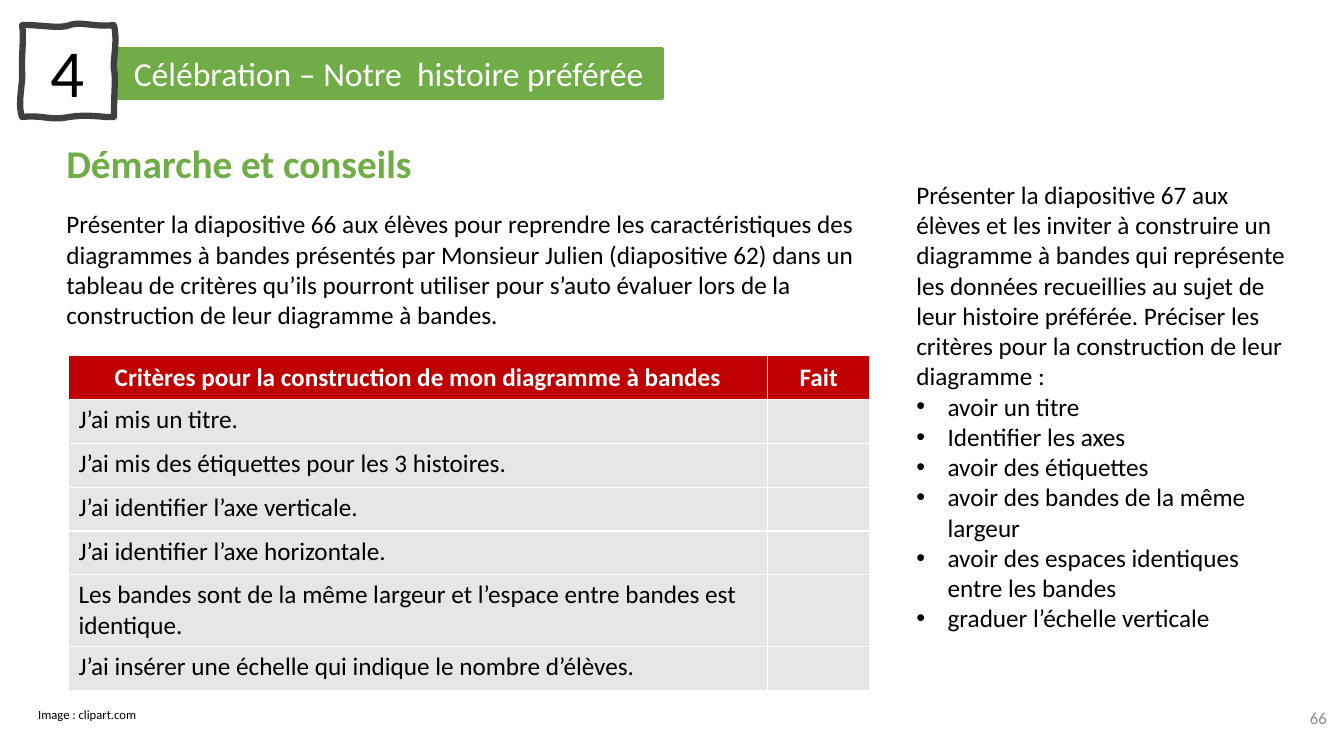
"""Build the teaching slide on criteria for a bar chart."""
from lxml import etree
from pptx import Presentation
from pptx.dml.color import RGBColor
from pptx.enum.shapes import MSO_SHAPE
from pptx.enum.text import MSO_ANCHOR, PP_ALIGN
from pptx.oxml.ns import qn
from pptx.util import Inches, Pt

LEFT, CENTER, RIGHT = PP_ALIGN.LEFT, PP_ALIGN.CENTER, PP_ALIGN.RIGHT
TOP, MIDDLE = MSO_ANCHOR.TOP, MSO_ANCHOR.MIDDLE
RECTANGLE = MSO_SHAPE.RECTANGLE
GREEN = RGBColor(0x70, 0xAD, 0x47)
RED = RGBColor(0xC0, 0x00, 0x00)
PALE = RGBColor(0xE7, 0xE6, 0xE6)
CHARCOAL = RGBColor(0x40, 0x40, 0x40)
GREY = RGBColor(0x8C, 0x8C, 0x8C)
BLACK = RGBColor(0x00, 0x00, 0x00)
WHITE = RGBColor(0xFF, 0xFF, 0xFF)
GRID = Inches(0.1)
INDENT = Inches(0.31)


def grid(*steps):
    """Turn grid steps into slide lengths."""
    return [round(step * GRID) for step in steps]


def write(frame, lines, size=18, color=BLACK, bold=False, align=LEFT,
          bullets_from=None):
    """Fill a text frame, one paragraph per line."""
    for index, line in enumerate(lines):
        paragraph = frame.paragraphs[0] if index == 0 else frame.add_paragraph()
        paragraph.alignment = align
        if bullets_from is not None and index >= bullets_from:
            properties = paragraph._p.get_or_add_pPr()
            properties.set("marL", str(INDENT))
            properties.set("indent", str(-INDENT))
            etree.SubElement(properties, qn("a:buFont"), typeface="Arial")
            etree.SubElement(properties, qn("a:buChar"), char="•")
        run = paragraph.add_run()
        run.text = line
        run.font.name = "Calibri"
        run.font.size = Pt(size)
        run.font.bold = bold
        run.font.color.rgb = color


presentation = Presentation()
presentation.slide_width = Inches(13.33)
presentation.slide_height = Inches(7.5)
slide = presentation.slides.add_slide(presentation.slide_layouts[6])
shapes = slide.shapes

banner = shapes.add_shape(RECTANGLE, *grid(11.4, 4.8, 54.3, 5))
banner.shadow.inherit = False
banner.fill.solid()
banner.fill.fore_color.rgb = GREEN
banner.line.color.rgb = GREEN
banner.line.width = Pt(2.25)
banner.text_frame.vertical_anchor = MIDDLE
write(banner.text_frame, ["Célébration – Notre  histoire préférée"],
      size=24, color=WHITE, align=CENTER)

wavy_edge = [
    (2.2, 2.5),
    (3.6, 2.4), (5.9, 2.9), (6.9, 2.5), (8, 2.1), (9.3, 2.7), (11.3, 2.5),
    (11.7, 4), (11.2, 5.9), (11.3, 6.8), (11.5, 7.7), (11.3, 9.5), (11.3, 11.6),
    (10.3, 11.7), (9, 11.3), (6.9, 11.6), (4.9, 12), (4.5, 11.4), (2.2, 11.6),
    (1.7, 10.4), (2.3, 8.2), (2.2, 7.2), (2.1, 6.2), (2.4, 3.5), (2.2, 2.5),
]
STEPS = 12
outline = []
for first in range(0, len(wavy_edge) - 1, 3):
    controls = wavy_edge[first:first + 4]
    for step in range(1, STEPS + 1):
        t = step / STEPS
        weights = ((1 - t) ** 3, 3 * t * (1 - t) ** 2, 3 * t * t * (1 - t), t ** 3)
        outline.append(grid(*(sum(w * point[axis] for w, point in zip(weights, controls))
                              for axis in (0, 1))))
builder = shapes.build_freeform(*grid(*wavy_edge[0]))
builder.add_line_segments(outline, close=True)
number_frame = builder.convert_to_shape()
number_frame.shadow.inherit = False
number_frame.fill.solid()
number_frame.fill.fore_color.rgb = WHITE
number_frame.line.color.rgb = CHARCOAL
number_frame.line.width = Pt(4.5)
number_frame.text_frame.vertical_anchor = MIDDLE
write(number_frame.text_frame, ["4"], size=48, align=CENTER)

introduction = (
    "Présenter la diapositive 66 aux élèves pour reprendre les caractéristiques des "
    "diagrammes à bandes présentés par Monsieur Julien (diapositive 62) dans un "
    "tableau de critères qu’ils pourront utiliser pour s’auto évaluer lors de la "
    "construction de leur diagramme à bandes.")
instructions = [
    "Présenter la diapositive 67 aux élèves et les inviter à construire un diagramme "
    "à bandes qui représente les données recueillies au sujet de leur histoire "
    "préférée. Préciser les critères pour la construction de leur diagramme :",
    "avoir un titre",
    "Identifier les axes",
    "avoir des étiquettes",
    "avoir des bandes de la même largeur",
    "avoir des espaces identiques entre les bandes",
    "graduer l’échelle verticale",
]
passages = [
    ((5.6, 13.3, 46.3, 5.7), ["Démarche et conseils"], True,
     dict(size=28, color=GREEN, bold=True)),
    ((5.6, 20.2, 80.7, 13.1), [introduction], True, {}),
    ((89.9, 17.3, 38.6, 46.4), instructions, True, dict(bullets_from=1)),
    ((2.8, 69.6, 12.1, 2.5), ["Image : clipart.com"], False, dict(size=9)),
    ((124.6, 69.7, 8, 5), ["66"], True, dict(size=12, color=GREY, align=RIGHT)),
]
for place, lines, wraps, style in passages:
    frame = shapes.add_textbox(*grid(*place)).text_frame
    frame.word_wrap = wraps
    frame.vertical_anchor = TOP
    write(frame, lines, **style)

criteria = [
    "Critères pour la construction de mon diagramme à bandes",
    "J’ai mis un titre.",
    "J’ai mis des étiquettes pour les 3 histoires.",
    "J’ai identifier l’axe verticale.",
    "J’ai identifier l’axe horizontale.",
    "Les bandes sont de la même largeur et l’espace entre bandes est identique.",
    "J’ai insérer une échelle qui indique le nombre d’élèves.",
]
TWO_LINE_ROW = 5
checklist = shapes.add_table(len(criteria), 2, *grid(6.8, 35.3, 79.5, 33.2)).table
for column, width in zip(checklist.columns, grid(69.3, 10.2)):
    column.width = width
for index, criterion in enumerate(criteria):
    is_header = index == 0
    row = checklist.rows[index]
    row.height = grid(7.1 if index == TWO_LINE_ROW else 4.35)[0]
    for cell, words in zip(row.cells, (criterion, "Fait" if is_header else "")):
        cell.fill.solid()
        cell.fill.fore_color.rgb = RED if is_header else PALE
        cell.vertical_anchor = MIDDLE if is_header else TOP
        if words:
            write(cell.text_frame, [words], bold=is_header,
                  color=WHITE if is_header else BLACK,
                  align=CENTER if is_header else LEFT)

presentation.save("out.pptx")
